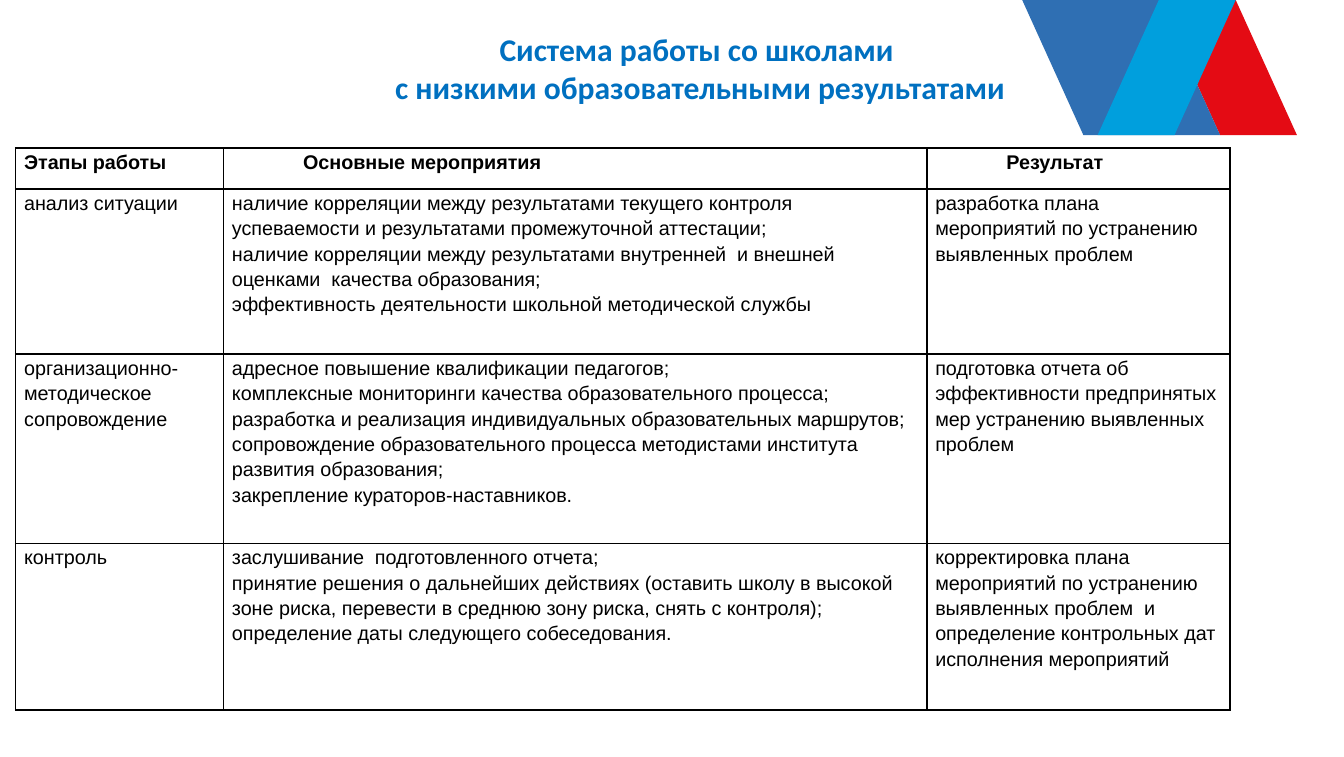
from lxml import etree
from pptx import Presentation
from pptx.dml.color import RGBColor
from pptx.enum.text import PP_ALIGN
from pptx.oxml.ns import qn
from pptx.util import Inches, Pt

CENTER = PP_ALIGN.CENTER
WIDE, HIGH = 9.44, 5.32
COLS = [1.46, 4.94, 2.13]
ROWS = [0.29, 1.16, 1.33, 1.17]
HEAD = ["Этапы работы", "Основные мероприятия", "Результат"]
STAGES = [
    ["анализ ситуации",
     "наличие корреляции между результатами текущего контроля успеваемости "
     "и результатами промежуточной аттестации;\n"
     "наличие корреляции между результатами внутренней  и внешней оценками  "
     "качества образования;\n"
     "эффективность деятельности школьной методической службы",
     "разработка плана мероприятий по устранению выявленных проблем"],
    ["организационно-методическое сопровождение",
     "адресное повышение квалификации педагогов;\n"
     "комплексные мониторинги качества образовательного процесса;\n"
     "разработка и реализация индивидуальных образовательных маршрутов;\n"
     "сопровождение образовательного процесса методистами института "
     "развития образования;\n"
     "закрепление кураторов-наставников.",
     "подготовка отчета об эффективности предпринятых мер устранению "
     "выявленных проблем"],
    ["контроль",
     "заслушивание  подготовленного отчета;\n"
     "принятие решения о дальнейших действиях (оставить школу в высокой зоне "
     "риска, перевести в среднюю зону риска, снять с контроля);\n"
     "определение даты следующего собеседования.",
     "корректировка плана мероприятий по устранению выявленных проблем  "
     "и определение контрольных дат исполнения мероприятий"],
]


def color(code):
    return RGBColor.from_string(code)


def style(par, font, size, code, bold):
    for run in par.runs:
        run.font.name = font
        run.font.size = Pt(size)
        run.font.bold = bold
        run.font.color.rgb = color(code)


def add_band(slide, points, code):
    path = [(Inches(x), Inches(y)) for x, y in points]
    form = slide.shapes.build_freeform(*path[0])
    form.add_line_segments(path[1:], close=True)
    band = form.convert_to_shape()
    band.shadow.inherit = False
    band.fill.solid()
    band.fill.fore_color.rgb = color(code)
    band.line.fill.background()


def add_corner(slide, left, top, high):
    """Draw three slanted bands that share one slope."""
    slant, mid, end = 0.43, 0.96, 1.5

    def band(start, stop, lean, code):
        add_band(slide, [(left + start, top), (left + start + lean, top + high),
                         (left + stop + lean, top + high), (left + stop, top)], code)

    band(mid, end, slant, "E40B14")
    band(0, mid, slant, "2F6FB3")
    band(mid, end, -slant, "009FDD")


def add_title(slide, left, top, wide, high):
    frame = slide.shapes.add_textbox(
        Inches(left), Inches(top), Inches(wide), Inches(high)).text_frame
    frame.word_wrap = True
    frame.text = "Система работы со школами \nс низкими образовательными результатами"
    for par in frame.paragraphs:
        par.alignment = CENTER
        style(par, "Calibri", 16, "0070C0", True)


def add_border(cell):
    props = cell._tc.get_or_add_tcPr()
    for side in ("lnL", "lnR", "lnT", "lnB"):
        line = etree.SubElement(props, qn("a:" + side), w=str(Pt(1)))
        fill = etree.SubElement(line, qn("a:solidFill"))
        etree.SubElement(fill, qn("a:srgbClr"), val="000000")


def fill_cell(cell, text, head, indent):
    cell.margin_left = cell.margin_right = Inches(0.06)
    cell.margin_top = cell.margin_bottom = 0
    add_border(cell)
    cell.fill.background()
    cell.text_frame.text = text
    for par in cell.text_frame.paragraphs:
        par.line_spacing = 1.15
        if indent:
            par._p.get_or_add_pPr().set("indent", str(Inches(0.5)))
        style(par, "Arial", 10, "000000", head)


def add_stages(slide, left, top):
    table = slide.shapes.add_table(
        len(ROWS), len(COLS), Inches(left), Inches(top),
        Inches(sum(COLS)), Inches(sum(ROWS))).table
    table.first_row = table.horz_banding = False
    for col, wide in zip(table.columns, COLS):
        col.width = Inches(wide)
    for row, high in zip(table.rows, ROWS):
        row.height = Inches(high)
    for r, texts in enumerate([HEAD] + STAGES):
        for c, text in enumerate(texts):
            fill_cell(table.cell(r, c), text, r == 0, r == 0 and c > 0)


def main():
    deck = Presentation()
    deck.slide_width, deck.slide_height = Inches(WIDE), Inches(HIGH)
    slide = deck.slides.add_slide(deck.slide_layouts[6])
    add_corner(slide, 7.18, 0, 0.95)
    add_stages(slide, 0.11, 1.04)
    add_title(slide, WIDE * 0.271, HIGH * 0.03, WIDE / 2, HIGH * 0.12)
    deck.save("out.pptx")


if __name__ == "__main__":
    main()
